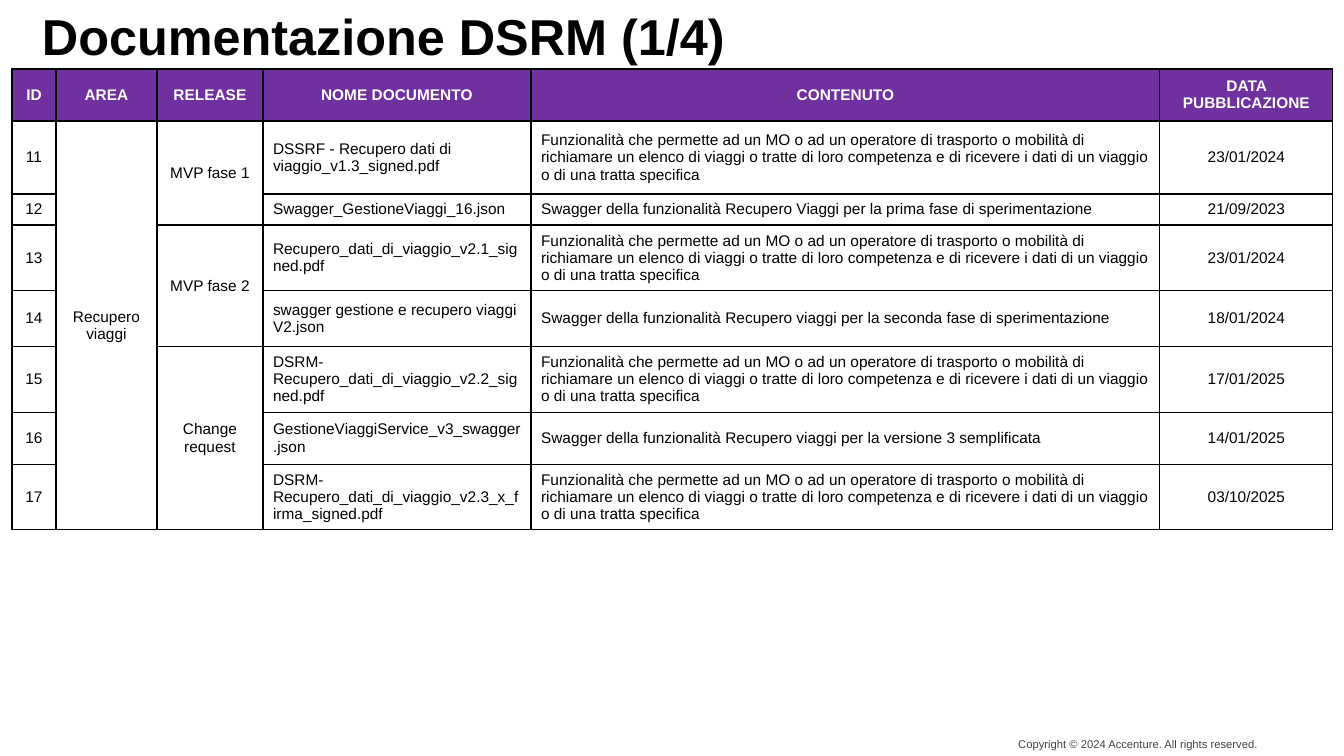
from lxml.etree import SubElement
from pptx import Presentation
from pptx.dml.color import RGBColor
from pptx.enum.text import MSO_ANCHOR, PP_ALIGN
from pptx.oxml.ns import qn
from pptx.util import Emu, Pt

BLACK = RGBColor(0x00, 0x00, 0x00)
WHITE = RGBColor(0xFF, 0xFF, 0xFF)
PURPLE = RGBColor(0x70, 0x30, 0xA0)

COLUMN_WIDTHS = [44, 101, 106, 268, 629, 173]
ROW_HEIGHTS = [52, 73, 31, 62, 56, 61, 52, 62]
HEADINGS = ["ID", "AREA", "RELEASE", "NOME DOCUMENTO", "CONTENUTO", "DATA PUBBLICAZIONE"]
LEFT_ALIGNED = ("NOME DOCUMENTO", "CONTENUTO")
RECOVERY = (
    "Funzionalità che permette ad un MO o ad un operatore di trasporto o mobilità di "
    "richiamare un elenco di viaggi o tratte di loro competenza e di ricevere i dati "
    "di un viaggio o di una tratta specifica"
)
SWAGGER = "Swagger della funzionalità Recupero "
DOCUMENTS = [
    ("11", "Recupero viaggi", "MVP fase 1",
     "DSSRF - Recupero dati di viaggio_v1.3_signed.pdf", RECOVERY, "23/01/2024"),
    ("12", "", "", "Swagger_GestioneViaggi_16.json",
     SWAGGER + "Viaggi per la prima fase di sperimentazione", "21/09/2023"),
    ("13", "", "MVP fase 2", "Recupero_dati_di_viaggio_v2.1_signed.pdf",
     RECOVERY, "23/01/2024"),
    ("14", "", "", "swagger gestione e recupero viaggi V2.json",
     SWAGGER + "viaggi per la seconda fase di sperimentazione", "18/01/2024"),
    ("15", "", "Change request", "DSRM-Recupero_dati_di_viaggio_v2.2_signed.pdf",
     RECOVERY, "17/01/2025"),
    ("16", "", "", "GestioneViaggiService_v3_swagger.json",
     SWAGGER + "viaggi per la versione 3 semplificata", "14/01/2025"),
    ("17", "", "", "DSRM-Recupero_dati_di_viaggio_v2.3_x_firma_signed.pdf",
     RECOVERY, "03/10/2025"),
]
MERGES = [(1, 7, 1), (1, 2, 2), (3, 4, 2), (5, 7, 2)]


def px(length):
    """Turn a length in px into EMU."""
    return Emu(round(length * 914400 / 100.8))


class SlideBuilder:
    """Holds the text style and the current slide."""

    def __init__(self, slide, font="Arial"):
        """Keep the slide and its font."""
        self.slide = slide
        self.font = font

    def add_words(self, frame, words, size, color=BLACK, bold=False, align=PP_ALIGN.LEFT):
        """Put one run into the first paragraph of a text frame."""
        paragraph = frame.paragraphs[0]
        paragraph.alignment = align
        run = paragraph.add_run()
        run.text = words
        run.font.name = self.font
        run.font.size = Pt(size)
        run.font.bold = bold
        run.font.color.rgb = color
        return run

    def text(self, left, top, width, height, words, size,
             anchor=MSO_ANCHOR.TOP, opacity=100, **style):
        """Add a text box without insets."""
        box = self.slide.shapes.add_textbox(px(left), px(top), px(width), px(height))
        frame = box.text_frame
        frame.word_wrap = True
        frame.vertical_anchor = anchor
        frame.margin_left = frame.margin_right = frame.margin_top = frame.margin_bottom = 0
        run = self.add_words(frame, words, size, **style)
        if opacity < 100:
            tint = run._r.find(".//" + qn("a:srgbClr"))
            SubElement(tint, qn("a:alpha"), val=str(opacity * 1000))

    def border(self, cell):
        """Draw a thin black line on each side of a cell."""
        properties = cell._tc.get_or_add_tcPr()
        for side in ("a:lnL", "a:lnR", "a:lnT", "a:lnB"):
            line = SubElement(properties, qn(side), w="12700")
            fill = SubElement(line, qn("a:solidFill"))
            SubElement(fill, qn("a:srgbClr"), val=str(BLACK))

    def table(self, left, top, widths, heights, rows, merges):
        """Add a bordered table with a purple heading row."""
        grid = self.slide.shapes.add_table(
            len(heights), len(widths), px(left), px(top), px(sum(widths)), px(sum(heights))
        ).table
        grid.first_row = grid.horz_banding = False
        for column, width in zip(grid.columns, widths):
            column.width = px(width)
        for row, height in zip(grid.rows, heights):
            row.height = px(height)
        for first, last, column in merges:
            grid.cell(first, column).merge(grid.cell(last, column))
        for row_index, row in enumerate(rows):
            heading = row_index == 0
            for column_index, words in enumerate(row):
                cell = grid.cell(row_index, column_index)
                self.border(cell)
                cell.fill.solid()
                cell.fill.fore_color.rgb = PURPLE if heading else WHITE
                cell.vertical_anchor = MSO_ANCHOR.MIDDLE
                flush = not heading and rows[0][column_index] in LEFT_ALIGNED
                if words:
                    self.add_words(cell.text_frame, words, 11,
                                   color=WHITE if heading else BLACK, bold=heading,
                                   align=PP_ALIGN.LEFT if flush else PP_ALIGN.CENTER)


def main():
    """Build the slide and save it."""
    deck = Presentation()
    deck.slide_width, deck.slide_height = px(1344), px(756)
    builder = SlideBuilder(deck.slides.add_slide(deck.slide_layouts[6]))
    builder.text(976, 733, 282, 22, "Copyright © 2024 Accenture. All rights reserved.", 8,
                 anchor=MSO_ANCHOR.MIDDLE, opacity=75, align=PP_ALIGN.RIGHT)
    builder.text(42, 5, 1260, 74, "Documentazione DSRM (1/4)", 36, bold=True)
    builder.table(12, 69, COLUMN_WIDTHS, ROW_HEIGHTS, [HEADINGS, *DOCUMENTS], MERGES)
    deck.save("out.pptx")


if __name__ == "__main__":
    main()
